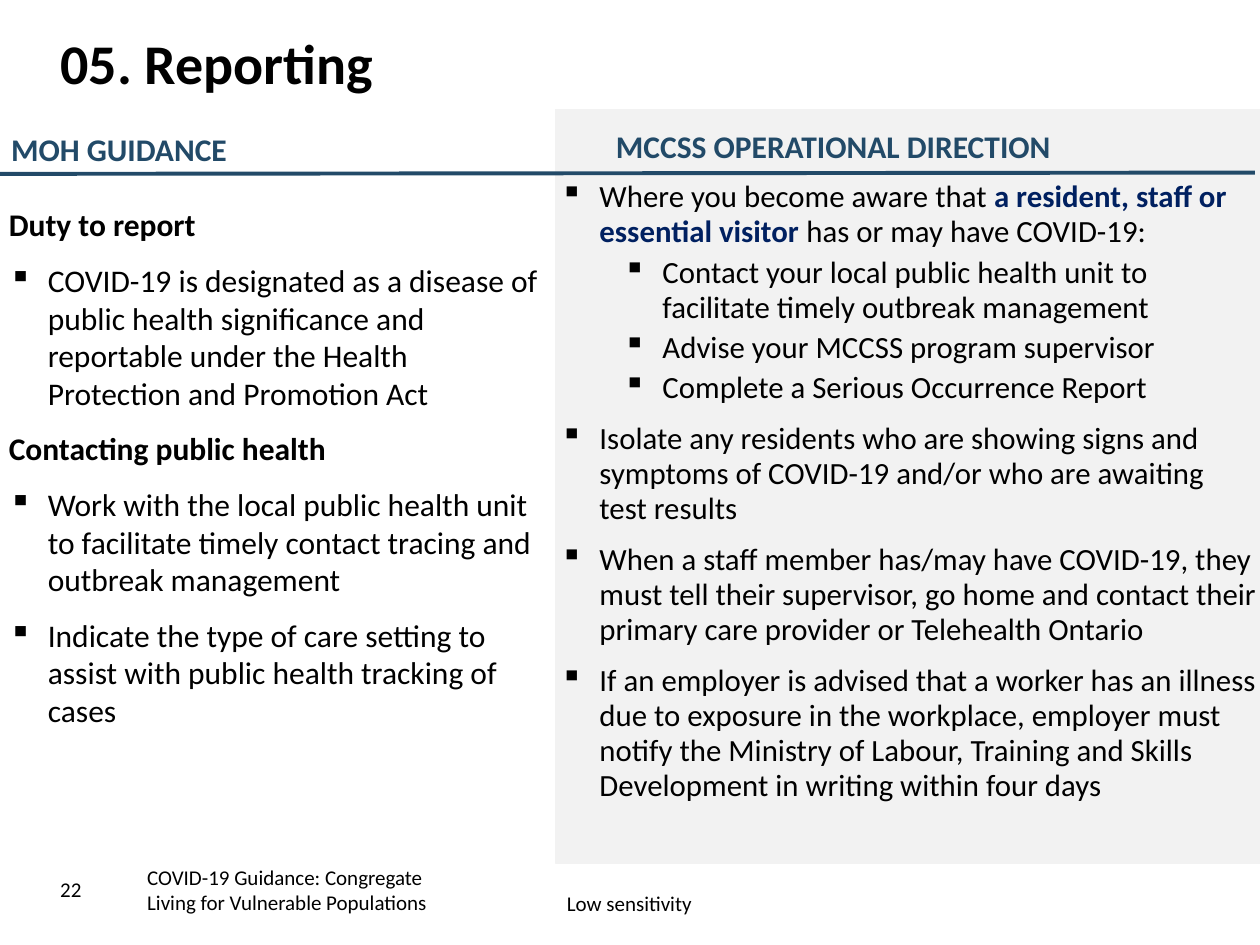
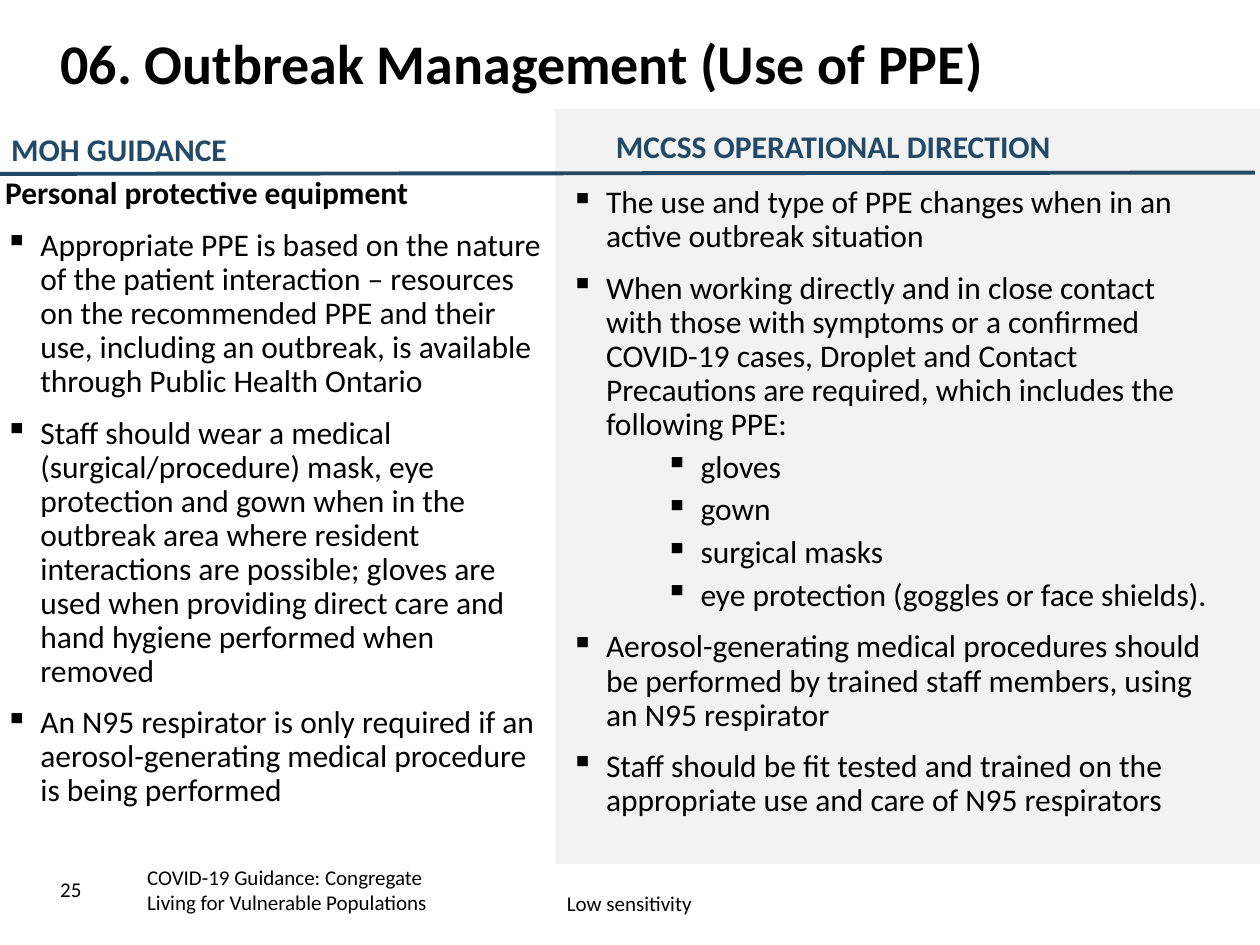
from dataclasses import dataclass
from typing import Optional, Union

import lxml.etree
import pptx
import pptx.dml.color
import pptx.enum.shapes
import pptx.enum.text
import pptx.oxml.ns
import pptx.presentation
import pptx.slide
import pptx.text.text
import pptx.util

Inches = pptx.util.Inches
Pt = pptx.util.Pt
RGBColor = pptx.dml.color.RGBColor
Paragraph = pptx.text.text._Paragraph
Anchor = pptx.enum.text.MSO_ANCHOR
AutoSize = pptx.enum.text.MSO_AUTO_SIZE
Align = pptx.enum.text.PP_ALIGN

BLACK = RGBColor(0x00, 0x00, 0x00)
PANEL_GREY = RGBColor(0xF2, 0xF2, 0xF2)
HEADING_BLUE = RGBColor(0x22, 0x4A, 0x68)
EMPHASIS_NAVY = RGBColor(0x00, 0x20, 0x60)
FONT = "Calibri"
TITLE_ONLY = 5
DEFAULT_INSETS = (0.1, 0.05, 0.1, 0.05)


# Content model
@dataclass(frozen=True)
class Heading:
    text: str


@dataclass(frozen=True)
class Bullet:
    text: str
    level: int = 0
    emphasis: str = ""  # phrase inside the text shown bold and navy


@dataclass(frozen=True)
class Box:
    left: float
    top: float
    width: float
    height: float
    insets: tuple[float, float, float, float] = DEFAULT_INSETS


@dataclass(frozen=True)
class TextStyle:
    size: float = 18
    color: RGBColor = BLACK
    bold: bool = False
    hanging: float = 0.28
    indents: tuple[float, float] = (0.28, 1.03)
    space_before: tuple[float, float] = (10, 5)
    space_after: Optional[float] = None
    line_spacing: Union[float, pptx.util.Length, None] = None


@dataclass(frozen=True)
class Column:
    box: Box
    style: TextStyle
    items: tuple[Union[Heading, Bullet], ...]


@dataclass(frozen=True)
class GuidanceSlide:
    title: str
    title_width: float
    number: str
    guidance: Column
    direction: Column


HEADING_STYLE = TextStyle(color=HEADING_BLUE, bold=True)
FOOTER_STYLE = TextStyle(size=12)
DUTY_STYLE = TextStyle(hanging=0.31, indents=(0.31, 0.81))
STEPS_STYLE = TextStyle(size=17.6, hanging=0.31, indents=(0.31, 0.81), space_before=(6, 0),
                        space_after=3, line_spacing=Pt(20))
EQUIPMENT_STYLE = TextStyle(line_spacing=0.9)

SLIDES = (
    GuidanceSlide(
        "05. Reporting", 6.87, "22",
        Column(Box(0, 1.59, 4.37, 5.28, (0.07, 0.04, 0.07, 0.04)), DUTY_STYLE, (
            Heading("Duty to report"),
            Bullet("COVID-19 is designated as a disease of public health significance and "
                   "reportable under the Health Protection and Promotion Act"),
            Heading("Contacting public health"),
            Bullet("Work with the local public health unit to facilitate timely contact "
                   "tracing and outbreak management"),
            Bullet("Indicate the type of care setting to assist with public health "
                   "tracking of cases"),
        )),
        Column(Box(4.35, 1.42, 5.63, 5.08, (0.1, 0, 0, 0)), STEPS_STYLE, (
            Bullet("Where you become aware that a resident, staff or essential visitor "
                   "has or may have COVID-19:",
                   emphasis="a resident, staff or essential visitor "),
            Bullet("Contact your local public health unit to facilitate timely outbreak "
                   "management", 1),
            Bullet("Advise your MCCSS program supervisor", 1),
            Bullet("Complete a Serious Occurrence Report", 1),
            Bullet("Isolate any residents who are showing signs and symptoms of COVID-19 "
                   "and/or who are awaiting test results"),
            Bullet("When a staff member has/may have COVID-19, they must tell their "
                   "supervisor, go home and contact their primary care provider or "
                   "Telehealth Ontario"),
            Bullet("If an employer is advised that a worker has an illness due to exposure "
                   "in the workplace, employer must notify the Ministry of Labour, Training "
                   "and Skills Development in writing within four days"),
        )),
    ),
    GuidanceSlide(
        "06. Outbreak Management (Use of PPE)", 9.58, "25",
        Column(Box(0, 1.37, 4.38, 5.5, (0.04, 0.04, 0.04, 0.04)), EQUIPMENT_STYLE, (
            Heading("Personal protective equipment"),
            Bullet("Appropriate PPE is based on the nature of the patient interaction – "
                   "resources on the recommended PPE and their use, including an outbreak, "
                   "is available through Public Health Ontario"),
            Bullet("Staff should wear a medical (surgical/procedure) mask, eye protection "
                   "and gown when in the outbreak area where resident interactions are "
                   "possible; gloves are used when providing direct care and hand hygiene "
                   "performed when removed"),
            Bullet("An N95 respirator is only required if an aerosol-generating medical "
                   "procedure is being performed"),
        )),
        Column(Box(4.46, 1.44, 5.29, 5.5, (0.07, 0.04, 0.07, 0.04)), EQUIPMENT_STYLE, (
            Bullet("The use and type of PPE changes when in an active outbreak situation"),
            Bullet("When working directly and in close contact with those with symptoms or "
                   "a confirmed COVID-19 cases, Droplet and Contact Precautions are "
                   "required, which includes the following PPE:"),
            Bullet("gloves", 1),
            Bullet("gown", 1),
            Bullet("surgical masks", 1),
            Bullet("eye protection (goggles or face shields).", 1),
            Bullet("Aerosol-generating medical procedures should be performed by trained "
                   "staff members, using an N95 respirator"),
            Bullet("Staff should be fit tested and trained on the appropriate use and care "
                   "of N95 respirators"),
        )),
    ),
)


# Text helpers
def set_font(font: pptx.text.text.Font, size: float, color: RGBColor, bold: bool) -> None:
    font.name = FONT
    font.size = Pt(size)
    font.bold = bold
    font.color.rgb = color


def add_text_box(slide: pptx.slide.Slide, box: Box) -> pptx.text.text.TextFrame:
    shape = slide.shapes.add_textbox(*map(Inches, (box.left, box.top, box.width, box.height)))
    frame = shape.text_frame
    frame.word_wrap = True
    (frame.margin_left, frame.margin_top,
     frame.margin_right, frame.margin_bottom) = map(Inches, box.insets)
    return frame


def add_label(slide: pptx.slide.Slide, box: Box, text: str,
              style: TextStyle) -> pptx.text.text.TextFrame:
    frame = add_text_box(slide, box)
    frame.text = text
    for paragraph in frame.paragraphs:
        set_font(paragraph.font, style.size, style.color, style.bold)
    return frame


def add_bullet_mark(paragraph: Paragraph, indent: float, hanging: float) -> None:
    properties = paragraph._p.get_or_add_pPr()
    properties.set("marL", str(Inches(indent)))
    properties.set("indent", str(-Inches(hanging)))
    mark = lxml.etree.SubElement(properties, pptx.oxml.ns.qn("a:buChar"))
    mark.set("char", "▪")


def add_item_text(paragraph: Paragraph, item: Union[Heading, Bullet]) -> None:
    if isinstance(item, Heading) or not item.emphasis:
        paragraph.add_run().text = item.text
        return
    before, phrase, after = item.text.partition(item.emphasis)
    for text in (before, phrase, after):
        run = paragraph.add_run()
        run.text = text
        if text == phrase:
            run.font.bold = True
            run.font.color.rgb = EMPHASIS_NAVY


def add_column(slide: pptx.slide.Slide, column: Column) -> None:
    style = column.style
    frame = add_text_box(slide, column.box)
    for index, item in enumerate(column.items):
        paragraph = frame.add_paragraph() if index else frame.paragraphs[0]
        level = item.level if isinstance(item, Bullet) else 0
        paragraph.level = level
        if isinstance(item, Bullet):
            add_bullet_mark(paragraph, style.indents[level], style.hanging)
        if index:
            paragraph.space_before = Pt(style.space_before[level])
        if style.space_after is not None:
            paragraph.space_after = Pt(style.space_after)
        if style.line_spacing is not None:
            paragraph.line_spacing = style.line_spacing
        set_font(paragraph.font, style.size, style.color, isinstance(item, Heading))
        add_item_text(paragraph, item)


# Parts shared by the slides
def format_title(slide: pptx.slide.Slide, text: str, width: float) -> None:
    title = slide.shapes.title
    title.left, title.top, title.width, title.height = map(Inches, (0.38, 0.24, width, 0.85))
    frame = title.text_frame
    frame.text = text
    frame.vertical_anchor = Anchor.TOP
    frame.auto_size = AutoSize.NONE
    paragraph = frame.paragraphs[0]
    paragraph.alignment = Align.LEFT
    paragraph.line_spacing = 0.9
    set_font(paragraph.font, 32, BLACK, True)


def add_panel(slide: pptx.slide.Slide) -> None:
    panel = slide.shapes.add_shape(pptx.enum.shapes.MSO_SHAPE.RECTANGLE,
                                   *map(Inches, (4.41, 0.87, 5.63, 5.98)))
    panel.shadow.inherit = False
    panel.fill.solid()
    panel.fill.fore_color.rgb = PANEL_GREY
    panel.line.color.rgb = PANEL_GREY
    panel.line.width = Pt(1)


def add_column_headings(slide: pptx.slide.Slide) -> None:
    rule = slide.shapes.add_connector(pptx.enum.shapes.MSO_CONNECTOR.STRAIGHT,
                                      *map(Inches, (0, 1.38, 9.96, 1.37)))
    rule.line.color.rgb = HEADING_BLUE
    rule.line.width = Pt(2.25)
    lxml.etree.SubElement(rule._element.spPr, pptx.oxml.ns.qn("a:effectLst"))
    for box, text in ((Box(-0.01, 0.98, 2.83, 0.4), "MOH GUIDANCE"),
                      (Box(4.79, 0.96, 4.53, 0.4), "MCCSS OPERATIONAL DIRECTION")):
        add_label(slide, box, text, HEADING_STYLE).auto_size = AutoSize.SHAPE_TO_FIT_TEXT


def add_footer(slide: pptx.slide.Slide, number: str) -> None:
    for box, text, alignment in (
        (Box(0.38, 6.86, 0.56, 0.4), number, Align.LEFT),
        (Box(1.07, 6.86, 3.67, 0.4),
         "COVID-19 Guidance: Congregate\nLiving for Vulnerable Populations", Align.LEFT),
        (Box(3.62, 6.97, 2.75, 0.4), "Low sensitivity", Align.CENTER),
    ):
        frame = add_label(slide, box, text, FOOTER_STYLE)
        frame.vertical_anchor = Anchor.MIDDLE
        for paragraph in frame.paragraphs:
            paragraph.alignment = alignment


def add_guidance_slide(presentation: pptx.presentation.Presentation,
                       content: GuidanceSlide) -> None:
    slide = presentation.slides.add_slide(presentation.slide_layouts[TITLE_ONLY])
    format_title(slide, content.title, content.title_width)
    add_panel(slide)
    add_footer(slide, content.number)
    add_column(slide, content.guidance)
    add_column(slide, content.direction)
    add_column_headings(slide)


def main() -> None:
    presentation = pptx.Presentation()
    presentation.slide_width = Inches(10)
    presentation.slide_height = Inches(7.5)
    for content in SLIDES:
        add_guidance_slide(presentation, content)
    presentation.save("out.pptx")


if __name__ == "__main__":
    main()
